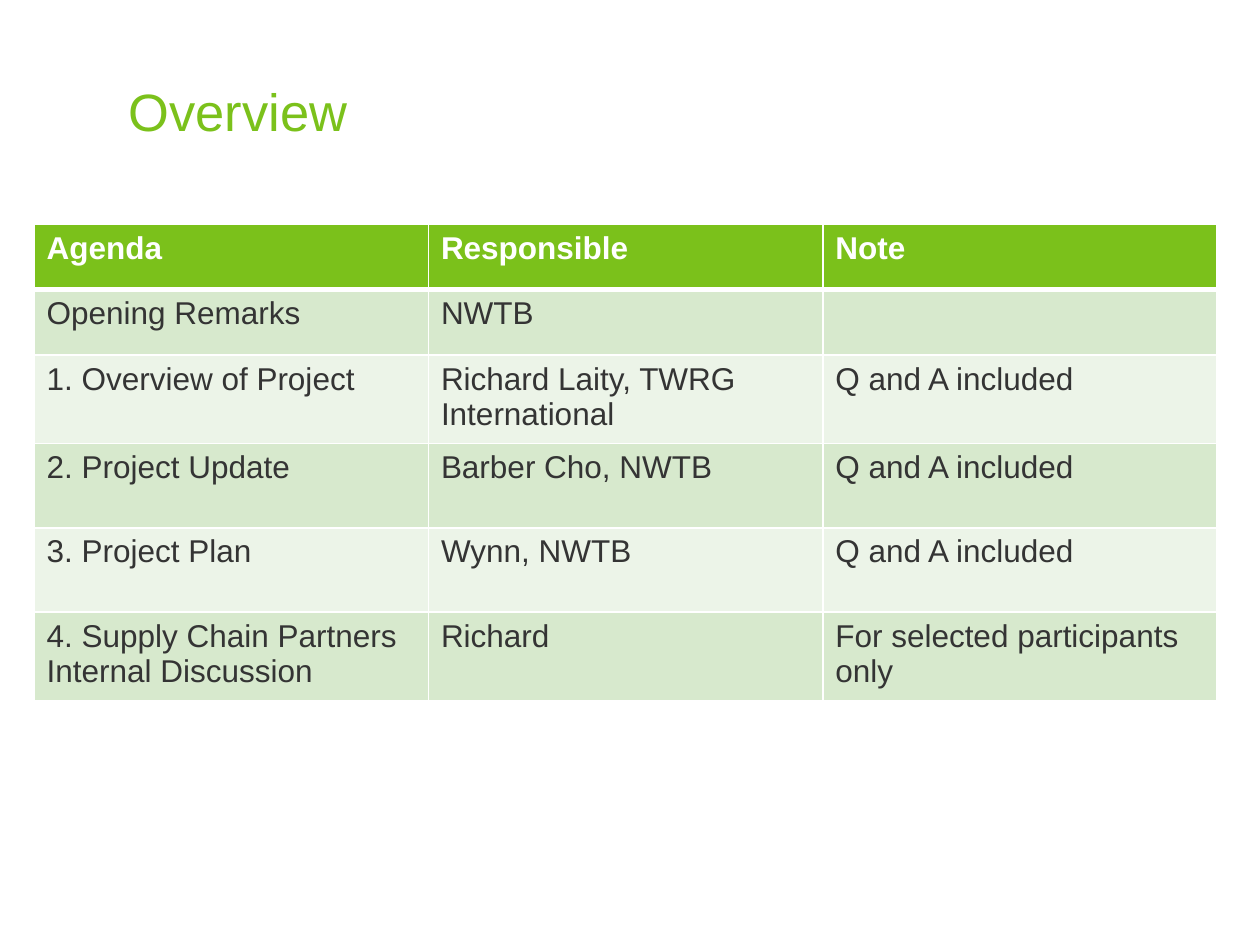
from lxml.etree import SubElement as Sub
from pptx import Presentation
from pptx.dml.color import RGBColor as RGB
from pptx.enum.text import MSO_ANCHOR as Anchor
from pptx.oxml.ns import qn
from pptx.util import Inches, Pt

HUES = {"green": "7BC11B", "dark": "343434", "white": "FFFFFF",
        "band": "D7E9CD", "pale": "ECF4E8"}
ROWS = [
    ("Agenda", "Responsible", "Note"),
    ("Opening Remarks", "NWTB", ""),
    ("1. Overview of Project", "Richard Laity, TWRG International", "Q and A included"),
    ("2. Project Update", "Barber Cho, NWTB", "Q and A included"),
    ("3. Project Plan", "Wynn, NWTB", "Q and A included"),
    ("4. Supply Chain Partners Internal Discussion", "Richard",
     "For selected participants only"),
]
SHORT, TALL = Inches(0.52), Inches(0.67)
HEIGHTS = [SHORT] * 2 + [TALL] * 4
COL = Inches(3.13)


def write(frame, text, size, hue, bold=False):
    run = frame.paragraphs[0].add_run()
    run.text = text
    run.font.name = "Arial"
    run.font.size = Pt(size)
    run.font.bold = bold
    run.font.color.rgb = RGB.from_string(HUES[hue])


def edge(cell, side, width):
    """Draw one white border; side is L, R, T or B."""
    line = Sub(cell._tc.get_or_add_tcPr(), qn(f"a:ln{side}"), w=str(Pt(width)))
    Sub(Sub(line, qn("a:solidFill")), qn("a:srgbClr"), val=HUES["white"])


deck = Presentation()
deck.slide_width, deck.slide_height = Inches(10), Inches(7.5)
slide = deck.slides.add_slide(deck.slide_layouts[6])

# Title
title = slide.shapes.add_textbox(Inches(1.02), 0, Inches(8.63), Inches(1.13))
frame = title.text_frame
frame.word_wrap = True
frame.vertical_anchor = Anchor.BOTTOM
frame.margin_left = frame.margin_right = frame.margin_top = frame.margin_bottom = 0
write(frame, "Overview", 30, "green")

# Agenda table
table = slide.shapes.add_table(len(ROWS), 3, Inches(0.27), Inches(1.78),
                               3 * COL, sum(HEIGHTS)).table
for col in table.columns:
    col.width = COL
for r, (texts, height) in enumerate(zip(ROWS, HEIGHTS)):
    table.rows[r].height = height
    head = r == 0
    fill = "green" if head else "band" if r % 2 else "pale"
    for c, text in enumerate(texts):
        cell = table.cell(r, c)
        for side, width in zip("LRTB", (1, 1, 3 if r == 1 else 1, 3 if head else 1)):
            edge(cell, side, width)
        cell.fill.solid()
        cell.fill.fore_color.rgb = RGB.from_string(HUES[fill])
        if text:
            write(cell.text_frame, text, 18, "white" if head else "dark", head)

deck.save("out.pptx")
